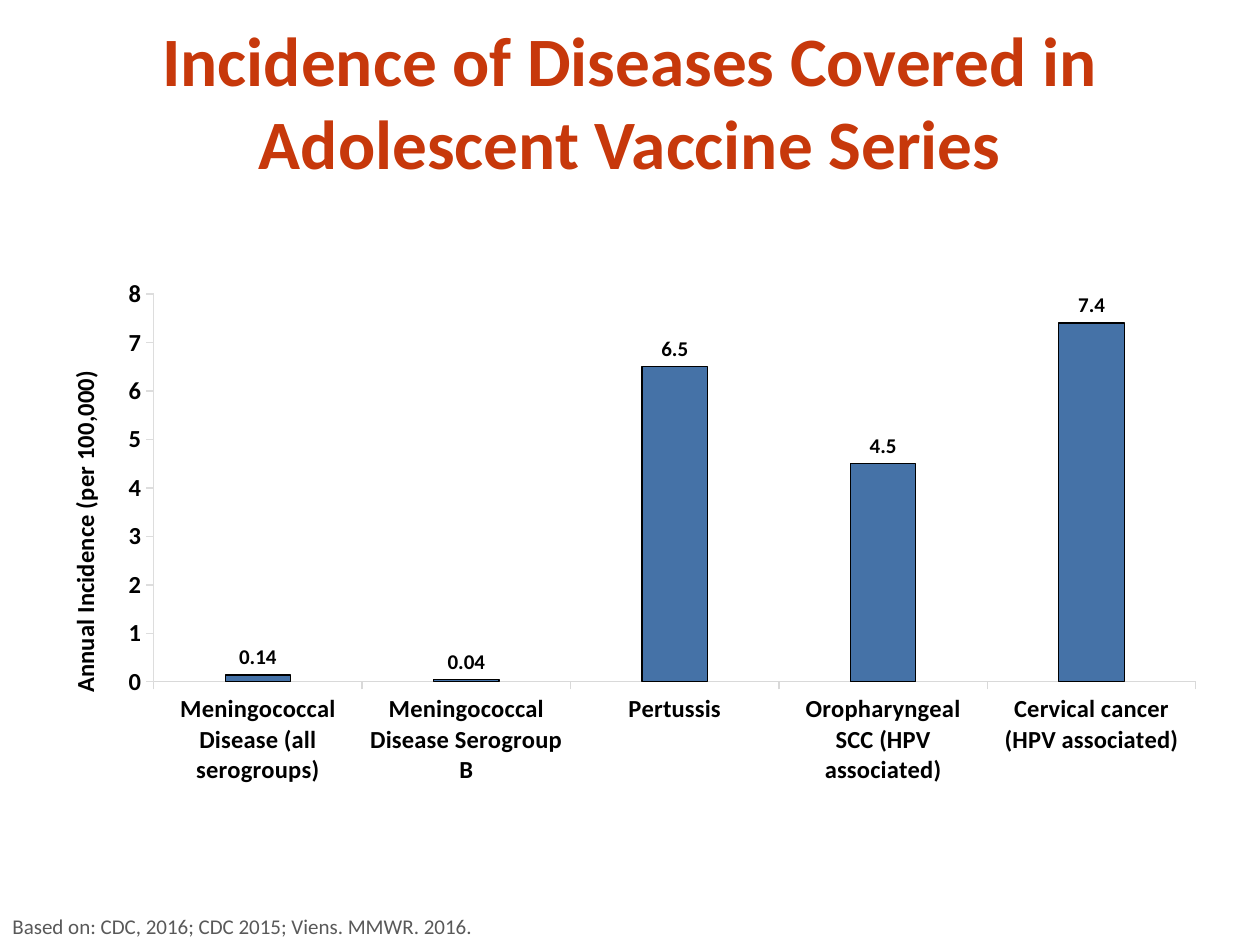
from lxml import etree
from pptx import Presentation
from pptx.chart.data import CategoryChartData
from pptx.dml.color import RGBColor
from pptx.enum.chart import XL_CHART_TYPE, XL_LABEL_POSITION, XL_TICK_MARK
from pptx.enum.text import MSO_ANCHOR, MSO_AUTO_SIZE, PP_ALIGN
from pptx.oxml.ns import qn
from pptx.util import Inches, Pt

COLUMN = XL_CHART_TYPE.COLUMN_CLUSTERED
OUTSIDE_END = XL_LABEL_POSITION.OUTSIDE_END
TICK_OUT = XL_TICK_MARK.OUTSIDE
TICK_NONE = XL_TICK_MARK.NONE
MIDDLE = MSO_ANCHOR.MIDDLE
NO_FIT = MSO_AUTO_SIZE.NONE
CENTER = PP_ALIGN.CENTER

FONT = "Calibri"
COLORS = {
    "title": "C7380B",
    "text": "000000",
    "source": "595959",
    "bar": "4572A7",
    "cat_line": "D9D9D9",
    "val_line": "DDDDDD",
}
INCIDENCE = {
    "Meningococcal Disease (all serogroups)": 0.14,
    "Meningococcal Disease Serogroup B": 0.04,
    "Pertussis": 6.5,
    "Oropharyngeal SCC (HPV associated)": 4.5,
    "Cervical cancer (HPV associated)": 7.4,
}


def color(name):
    return RGBColor.from_string(COLORS[name])


def set_font(font, size, name="text", bold=False):
    font.name = FONT
    font.size = Pt(size)
    font.bold = bold
    font.color.rgb = color(name)


def set_line(line, name):
    line.color.rgb = color(name)
    line.width = Pt(0.75)


def add_title(s, x, y, w, h):
    sp = s.shapes.title
    sp.left, sp.top, sp.width, sp.height = x, y, w, h
    tf = sp.text_frame
    tf.text = "Incidence of Diseases Covered in Adolescent Vaccine Series"
    tf.word_wrap = True
    tf.auto_size = NO_FIT
    tf.vertical_anchor = MIDDLE
    p = tf.paragraphs[0]
    p.alignment = CENTER
    set_font(p.font, 39.6, "title", True)


def set_plot_box(chart, **box):
    plot_area = chart.plots[0]._element.getparent()
    for old in plot_area.findall(qn("c:layout")):
        plot_area.remove(old)
    layout = etree.Element(qn("c:layout"))
    manual = etree.SubElement(layout, qn("c:manualLayout"))
    settings = {"layoutTarget": "inner", "xMode": "edge", "yMode": "edge", **box}
    for tag, value in settings.items():
        etree.SubElement(manual, qn(f"c:{tag}")).set("val", str(value))
    plot_area.insert(0, layout)


def add_incidence_chart(s, x, y, w, h):
    data = CategoryChartData()
    data.categories = list(INCIDENCE)
    data.add_series("Series 1", list(INCIDENCE.values()))
    chart = s.shapes.add_chart(COLUMN, x, y, w, h, data).chart
    chart.has_legend = False
    chart.has_title = False
    set_font(chart.font, 10)
    set_plot_box(chart, x=0.08, y=0.118, w=0.919, h=0.622)

    for axis, line in ((chart.category_axis, "cat_line"), (chart.value_axis, "val_line")):
        axis.has_major_gridlines = False
        axis.major_tick_mark = TICK_OUT
        axis.minor_tick_mark = TICK_NONE
        set_font(axis.tick_labels.font, 14, bold=True)
        set_line(axis.format.line, line)

    axis = chart.value_axis
    axis.minimum_scale, axis.maximum_scale, axis.major_unit = 0, 8, 1
    tf = axis.axis_title.text_frame
    tf.text = "Annual Incidence (per 100,000)"
    set_font(tf.paragraphs[0].font, 14, bold=True)

    plot = chart.plots[0]
    plot.vary_by_categories = False
    plot.gap_width = 219
    plot.overlap = -27
    series = plot.series[0]
    series.format.fill.solid()
    series.format.fill.fore_color.rgb = color("bar")
    set_line(series.format.line, "text")
    labels = series.data_labels
    labels.show_value = True
    labels.position = OUTSIDE_END
    set_font(labels.font, 12, bold=True)


def add_source(s, x, y, w, h):
    tf = s.shapes.add_textbox(x, y, w, h).text_frame
    tf.word_wrap = True
    tf.text = "Based on: CDC, 2016; CDC 2015; Viens. MMWR. 2016."
    set_font(tf.paragraphs[0].font, 12, "source")


def main():
    prs = Presentation()
    prs.slide_width, prs.slide_height = Inches(10), Inches(7.5)
    s = prs.slides.add_slide(prs.slide_layouts[5])
    add_title(s, Inches(0.5), Inches(0.17), Inches(9), Inches(1.25))
    add_incidence_chart(s, Inches(0.5), Inches(1.75), Inches(9), Inches(4.95))
    add_source(s, Inches(0), Inches(7.2), Inches(7.92), Inches(0.3))
    prs.save("out.pptx")


if __name__ == "__main__":
    main()
